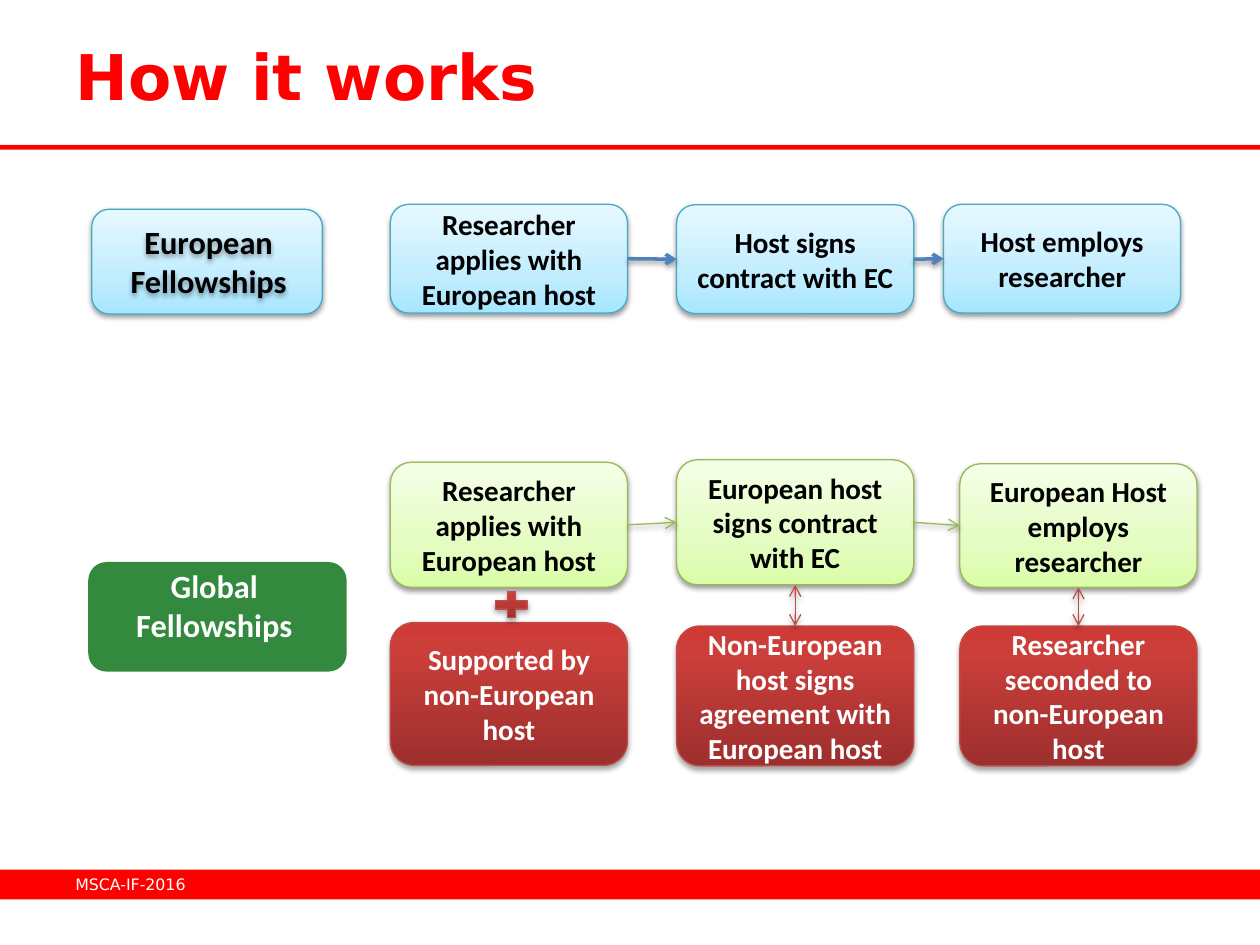
from lxml.etree import SubElement
from pptx import Presentation
from pptx.dml.color import RGBColor
from pptx.enum.shapes import MSO_CONNECTOR as CONN, MSO_SHAPE as SHAPE
from pptx.enum.text import MSO_ANCHOR as ANCHOR, PP_ALIGN as ALIGN
from pptx.oxml import parse_xml
from pptx.oxml.ns import nsdecls, qn
from pptx.util import Cm, Pt

# Content: boxes are (text, left, top, height) in cm
TITLE = "How it works"
FOOTER = "MSCA-IF-2016"
EUROPEAN = [
    ("Researcher applies with European host", 7.87, 4.12, 2.19),
    ("Host signs contract with EC", 13.64, 4.13, 2.19),
    ("Host employs researcher", 19.02, 4.12, 2.19),
]
GLOBAL = [
    ("Researcher applies with European host", 7.87, 9.32, 2.52),
    ("European host signs contract with EC", 13.64, 9.27, 2.52),
    ("European Host employs researcher", 19.35, 9.35, 2.49),
]
PARTNER = [
    ("Supported by non-European host", 7.87, 12.55, 2.88),
    ("Non-European host signs agreement with European host", 13.64, 12.62, 2.82),
    ("Researcher seconded to non-European host", 19.35, 12.62, 2.82),
]
BOX_W = 4.78
TOP, LEFT, BOTTOM, RIGHT = range(4)  # connection sites of a box

THEME = {
    "font": "Calibri", "head_font": "DejaVu Sans",
    "title": 36, "label": 18.5, "box": 16.6, "footer": 9,
    "red": "FF0000", "green": "33893D", "arrow": "4F81BD",
    "black": "000000", "white": "FFFFFF",
    # Gradient stops from bottom to top, line, text, shadow (opacity %, distance pt)
    "blue_box": ([(0, "A7E6FF"), (35, "C1EDFF"), (100, "E7F8FF")], "46AAC5", "000000", (38, 1.6)),
    "lime_box": ([(0, "DAFDA7"), (35, "E4FCC2"), (100, "F5FFE7")], "98B955", "000000", (38, 1.6)),
    "red_box": ([(0, "9C2F2D"), (80, "CB3E3A"), (100, "CE3B37")], "BF4C48", "FFFFFF", (35, 1.8)),
}


def rgb(name):
    return RGBColor.from_string(THEME.get(name, name))


def add_shadow(sp, opacity, distance):
    pr = sp._element.spPr
    for old in pr.findall(qn("a:effectLst")):
        pr.remove(old)
    pr.append(parse_xml(
        f'<a:effectLst {nsdecls("a")}><a:outerShdw blurRad="{Pt(3.1)}" dist="{Pt(distance)}" '
        f'dir="5400000" rotWithShape="0"><a:srgbClr val="000000">'
        f'<a:alpha val="{opacity * 1000}"/></a:srgbClr></a:outerShdw></a:effectLst>'))


def add_plain(s, kind, place, fill):
    sp = s.shapes.add_shape(kind, *map(Cm, place))
    sp.shadow.inherit = False
    sp.fill.solid()
    sp.fill.fore_color.rgb = rgb(fill)
    sp.line.fill.background()
    return sp


def add_styled(s, kind, place, style):
    stops, line, _, shadow = THEME[style]
    sp = s.shapes.add_shape(kind, *map(Cm, place))
    sp.fill.gradient()
    sp.fill.gradient_angle = 90
    stop_list = sp._element.spPr.find(qn("a:gradFill")).find(qn("a:gsLst"))
    for old in list(stop_list):
        stop_list.remove(old)
    for pos, color in stops:
        stop = SubElement(stop_list, qn("a:gs"), pos=str(pos * 1000))
        SubElement(stop, qn("a:srgbClr"), val=color)
    sp.line.color.rgb = rgb(line)
    sp.line.width = Pt(0.75)
    add_shadow(sp, *shadow)
    return sp


def write(sp, text, size, color, font="font", bold=True, align=ALIGN.CENTER):
    tf = sp.text_frame
    tf.word_wrap = True
    tf.vertical_anchor = ANCHOR.MIDDLE
    p = tf.paragraphs[0]
    p.alignment = align
    r = p.add_run()
    r.text = text
    r.font.name = THEME[font]
    r.font.size = Pt(THEME[size])
    r.font.bold = bold
    r.font.color.rgb = rgb(color)


def add_text(s, place, *args, **options):
    sp = s.shapes.add_textbox(*map(Cm, place))
    write(sp, *args, **options)
    return sp


def add_row(s, boxes, style):
    row = []
    for text, left, top, height in boxes:
        sp = add_styled(s, SHAPE.ROUNDED_RECTANGLE, (left, top, BOX_W, height), style)
        write(sp, text, "box", THEME[style][2])
        row.append(sp)
    return row


def add_arrow(s, start, end, color, width, shadow, sites=(RIGHT, LEFT), both=False):
    c = s.shapes.add_connector(CONN.STRAIGHT, 0, 0, 0, 0)
    c.begin_connect(start, sites[0])
    c.end_connect(end, sites[1])
    c.line.color.rgb = rgb(color)
    c.line.width = Pt(width)
    ln = c.line._get_or_add_ln()
    for tag in (("a:headEnd", "a:tailEnd") if both else ("a:tailEnd",)):
        SubElement(ln, qn(tag), type="arrow")
    add_shadow(c, *shadow)


def main():
    prs = Presentation()
    prs.slide_width, prs.slide_height = Cm(25.4), Cm(19.05)
    s = prs.slides.add_slide(prs.slide_layouts[6])

    # Red bands, title and footer
    add_plain(s, SHAPE.RECTANGLE, (0, 17.53, 25.4, 0.6), "red")
    add_plain(s, SHAPE.RECTANGLE, (0, 2.92, 25.4, 0.1), "red")
    add_text(s, (1.27, 0.33, 22.86, 2.39), TITLE, "title", "red",
             font="head_font", align=ALIGN.LEFT)
    add_text(s, (1.27, 17.32, 5.92, 1.02), FOOTER, "footer", "white",
             font="head_font", bold=False, align=ALIGN.LEFT)

    # Fellowship labels
    add_styled(s, SHAPE.ROUNDED_RECTANGLE, (1.85, 4.22, 4.65, 2.11), "blue_box")
    label = add_text(s, (2.11, 4.32, 4.19, 1.88), "European Fellowships", "label", "black")
    add_shadow(label, *THEME["blue_box"][3])
    add_plain(s, SHAPE.ROUNDED_RECTANGLE, (1.78, 11.33, 5.21, 2.21), "green")
    add_text(s, (1.63, 11.33, 5.38, 1.75), "Global Fellowships", "label", "white")

    # Step boxes
    european = add_row(s, EUROPEAN, "blue_box")
    hosts = add_row(s, GLOBAL, "lime_box")
    partners = add_row(s, PARTNER, "red_box")
    add_styled(s, SHAPE.MATH_PLUS, (9.88, 11.84, 0.86, 0.71), "red_box")

    # Arrows along the rows, then between hosts and partners
    _, lime, _, lime_shadow = THEME["lime_box"]
    _, red, _, red_shadow = THEME["red_box"]
    for start, end in zip(european, european[1:]):
        add_arrow(s, start, end, "arrow", 2, lime_shadow)
    for start, end in zip(hosts, hosts[1:]):
        add_arrow(s, start, end, lime, 0.75, lime_shadow)
    for host, partner in list(zip(hosts, partners))[1:]:
        add_arrow(s, host, partner, red, 0.75, red_shadow, (BOTTOM, TOP), both=True)

    prs.save("out.pptx")


if __name__ == "__main__":
    main()
